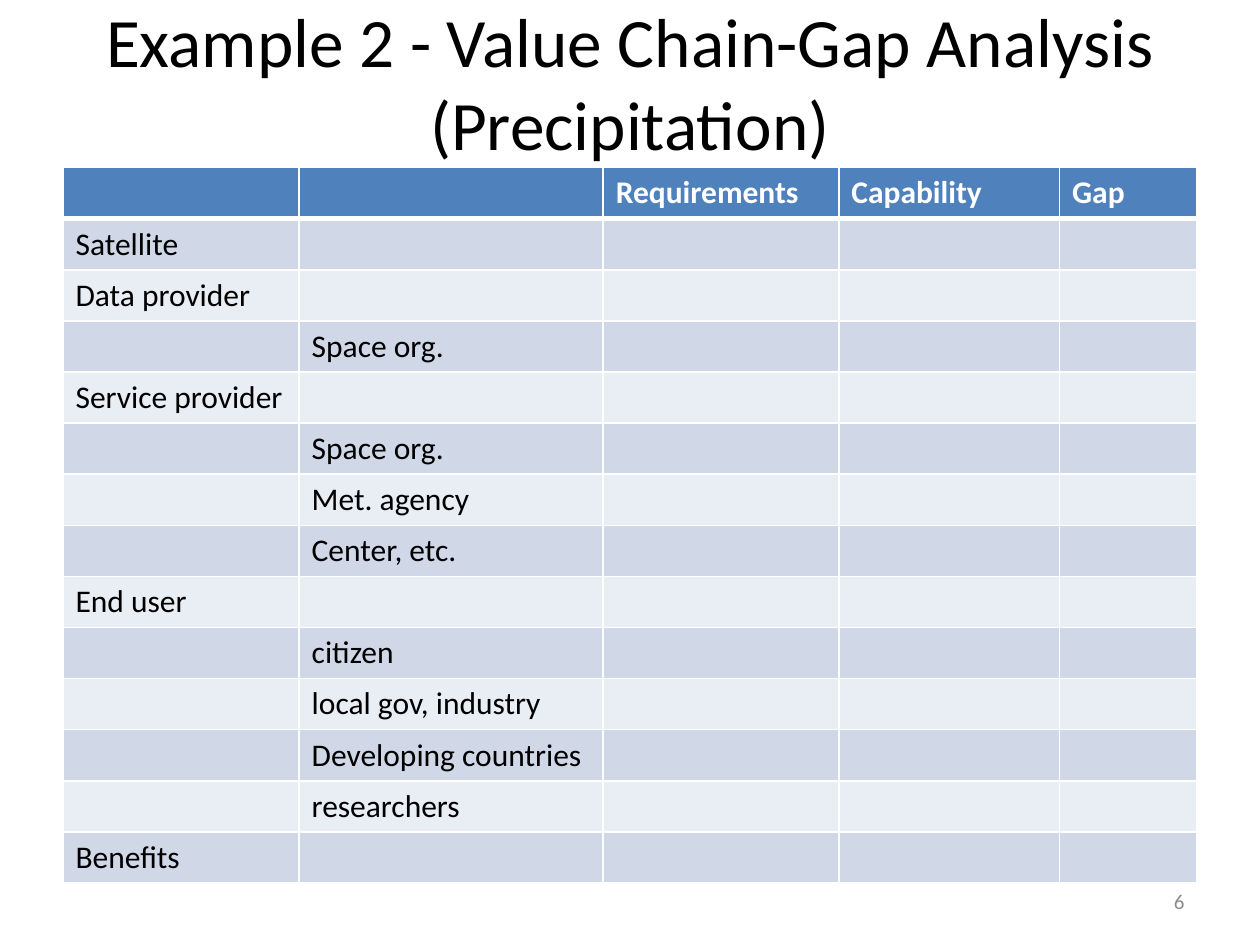
from lxml.etree import SubElement
from pptx import Presentation
from pptx.dml.color import RGBColor
from pptx.enum.text import MSO_ANCHOR, MSO_AUTO_SIZE, PP_ALIGN
from pptx.oxml.ns import qn
from pptx.util import Cm, Pt

# Content
TITLE = "Example 2 - Value Chain-Gap Analysis (Precipitation)"
PAGE = "6"
HEADER = ("", "", "Requirements", "Capability", "Gap")
SPACE_AGENCY = "Space org."
CHAIN = [
    ("Satellite", []),
    ("Data provider", [SPACE_AGENCY]),
    ("Service provider", [SPACE_AGENCY, "Met. agency", "Center, etc."]),
    ("End user", ["citizen", "local gov, industry", "Developing countries",
                  "researchers"]),
    ("Benefits", []),
]

# Style
FONT = "Calibri"
BLACK = RGBColor(0x00, 0x00, 0x00)
WHITE = RGBColor(0xFF, 0xFF, 0xFF)
GREY = RGBColor(0x8C, 0x8C, 0x8C)
HEADER_BLUE = RGBColor(0x4F, 0x81, 0xBD)
BANDS = (RGBColor(0xE9, 0xED, 0xF4), RGBColor(0xD0, 0xD8, 0xE8))

# Layout in cm
LEFT, WIDTH = 1.27, 22.86
TABLE_TOP, ROW_HEIGHT = 3.38, 1.03
COLUMN_WIDTHS = (4.76, 6.13, 4.75, 4.45, 2.77)


def add_text(tf, text, size, color, align=PP_ALIGN.LEFT, bold=False):
    p = tf.paragraphs[0]
    p.alignment = align
    r = p.add_run()
    r.text = text
    r.font.name = FONT
    r.font.size = Pt(size)
    r.font.bold = bold
    r.font.color.rgb = color


def add_border(cell, side, width, color):
    """Call before filling the cell: its lines come ahead of its fill."""
    tcPr = cell._tc.get_or_add_tcPr()
    line = SubElement(tcPr, qn(f"a:{side}"), w=str(Pt(width)))
    fill = SubElement(line, qn("a:solidFill"))
    SubElement(fill, qn("a:srgbClr"), val=str(color))


prs = Presentation()
prs.slide_width, prs.slide_height = Cm(25.4), Cm(19.05)
s = prs.slides.add_slide(prs.slide_layouts[5])

# Title
title = s.shapes.title
title.left, title.top = Cm(LEFT), Cm(0.05)
title.width, title.height = Cm(WIDTH), Cm(3.18)
tf = title.text_frame
tf.auto_size = MSO_AUTO_SIZE.NONE
tf.vertical_anchor = MSO_ANCHOR.MIDDLE
add_text(tf, TITLE, 39.6, BLACK, PP_ALIGN.CENTER)

# Table: each stage has its own row, followed by one row per actor
rows = [HEADER]
for stage, actors in CHAIN:
    rows.append((stage, "", "", "", ""))
    rows += [("", actor, "", "", "") for actor in actors]

table = s.shapes.add_table(
    len(rows), len(HEADER), Cm(LEFT), Cm(TABLE_TOP),
    Cm(WIDTH), Cm(ROW_HEIGHT * len(rows))).table
for column, width in zip(table.columns, COLUMN_WIDTHS):
    column.width = Cm(width)
for i, texts in enumerate(rows):
    table.rows[i].height = Cm(ROW_HEIGHT)
    is_header = i == 0
    for j, text in enumerate(texts):
        cell = table.cell(i, j)
        for side in ("lnL", "lnR", "lnT", "lnB"):
            under_header = (i, side) in ((0, "lnB"), (1, "lnT"))
            add_border(cell, side, 3 if under_header else 1, WHITE)
        cell.fill.solid()
        cell.fill.fore_color.rgb = HEADER_BLUE if is_header else BANDS[i % 2]
        if text:
            add_text(cell.text_frame, text, 18,
                     WHITE if is_header else BLACK, bold=is_header)

# Page number
sp = s.shapes.add_textbox(Cm(18.2), Cm(17.66), Cm(5.93), Cm(1.01))
tf = sp.text_frame
tf.word_wrap = True
tf.vertical_anchor = MSO_ANCHOR.MIDDLE
add_text(tf, PAGE, 12, GREY, PP_ALIGN.RIGHT)

prs.save("out.pptx")
